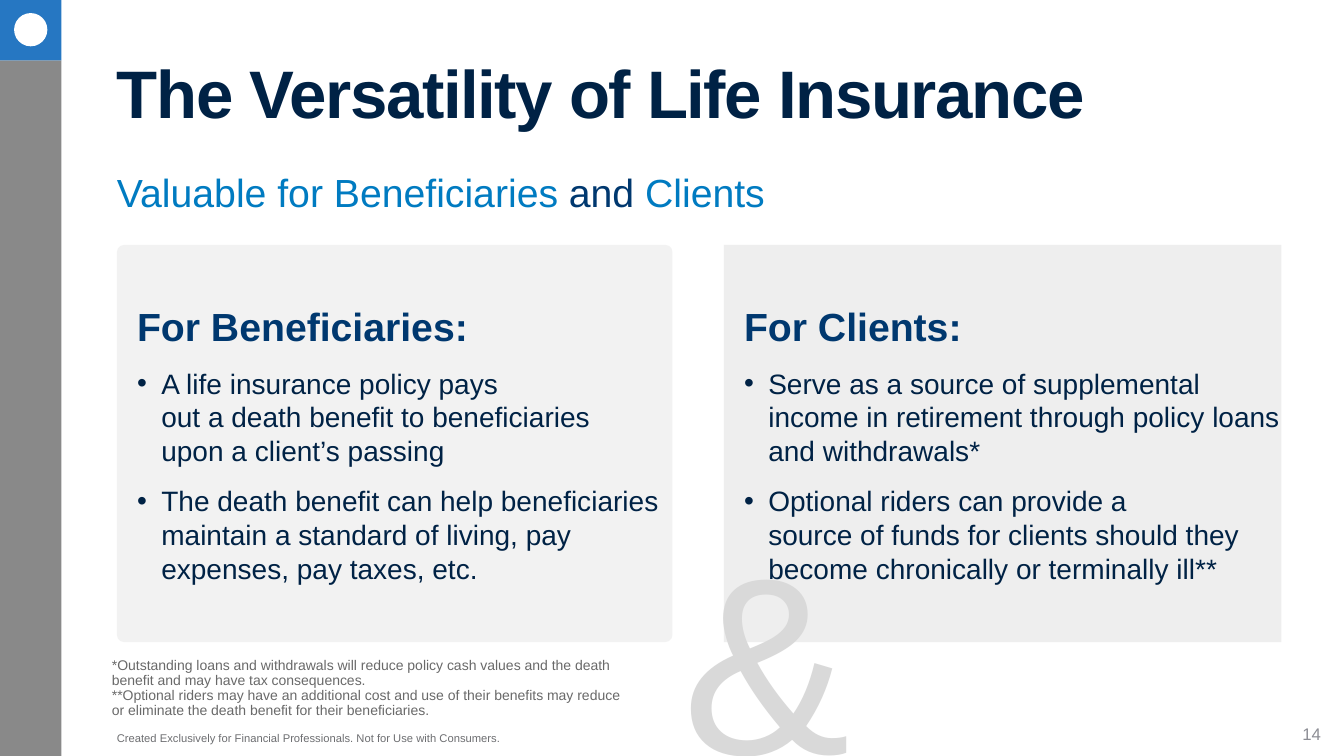
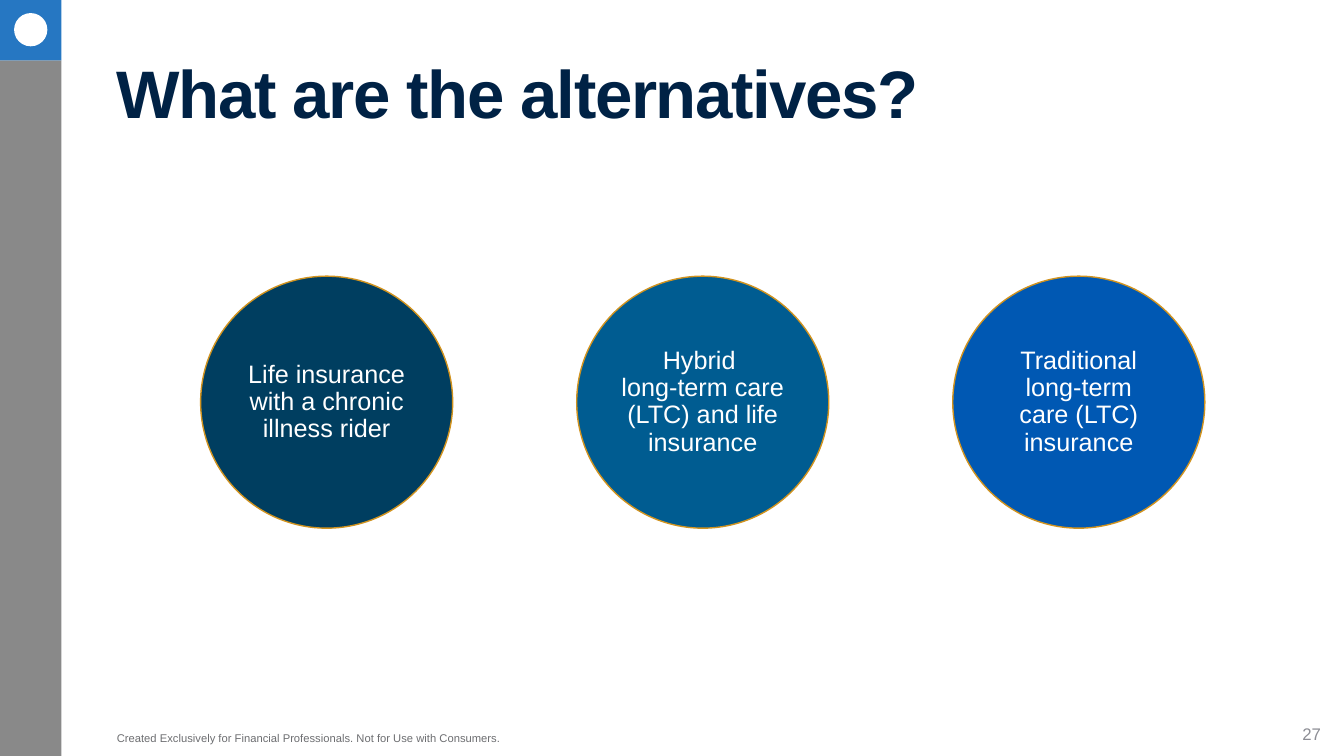
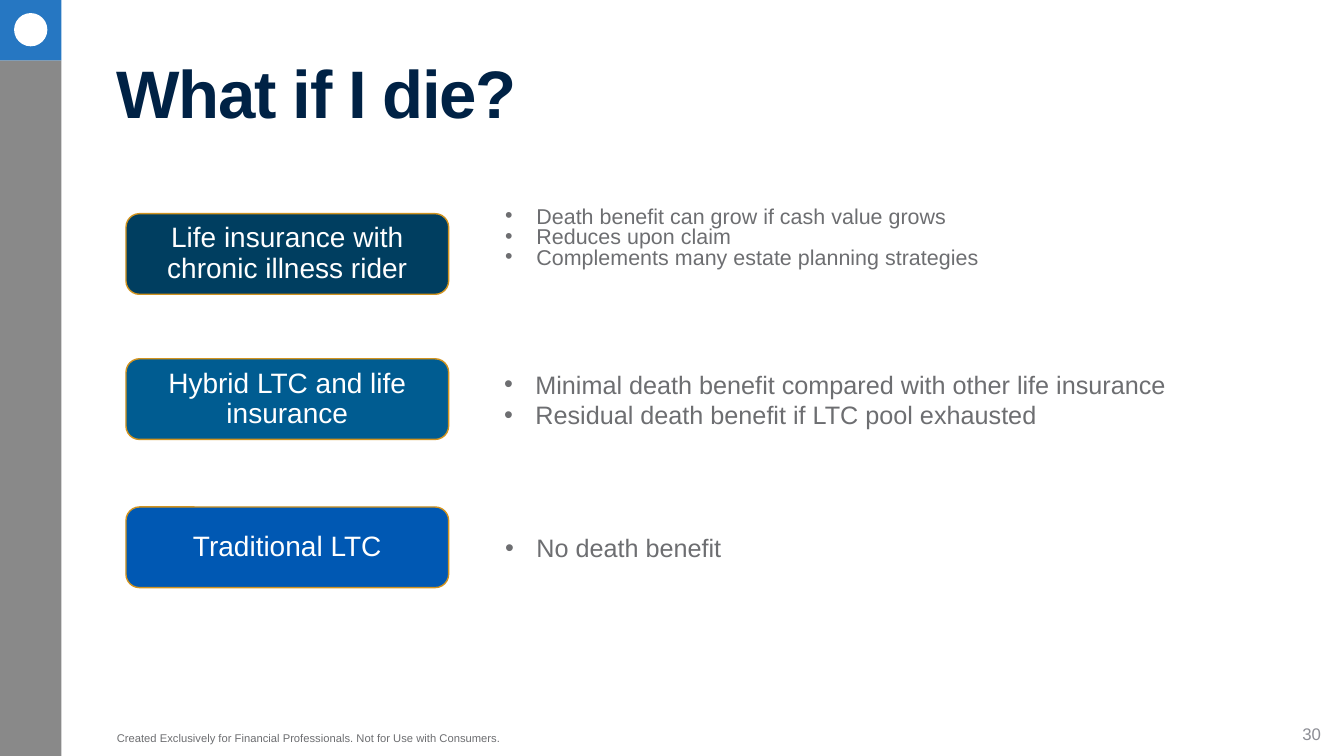
from copy import deepcopy

from lxml import etree
from pptx import Presentation
from pptx import util as u
from pptx.dml import color
from pptx.enum import shapes, text
from pptx.oxml import ns

FONT = "Arial"
NAVY, BLUE, SKY = "002245", "00386F", "007BC1"
GRAY, WHITE, GOLD = "6D6E71", "FFFFFF", "D1931F"
TONES = ["003E60", "005C91", "0058B3"]
KIND = shapes.MSO_SHAPE
ALIGN = text.PP_ALIGN
ANCHOR = text.MSO_ANCHOR
COMPARE, TITLED = 4, 5


def rgb(code):
    """Turn a hex string into a colour."""
    return color.RGBColor.from_string(code)


def place(shape, box):
    """Move a shape to a box given in inches."""
    shape.left, shape.top, shape.width, shape.height = map(u.Inches, box)


def draw(slide, kind, box, fill, line=None):
    """Add a flat preset shape."""
    shape = slide.shapes.add_shape(kind, *map(u.Inches, box))
    shape.shadow.inherit = False
    shape.fill.solid()
    shape.fill.fore_color.rgb = rgb(fill)
    if line:
        shape.line.color.rgb = rgb(line)
        shape.line.width = u.Pt(1)
    else:
        shape.line.fill.background()
    return shape


def send(slide, shape):
    """Send a shape to the back."""
    slide.shapes._spTree.insert(2, shape._element)


def frame(shape, anchor=ANCHOR.TOP, ins=(0.1, 0.05, 0.1, 0.05)):
    """Set up the text frame of a shape and return it."""
    area = shape.text_frame
    area.word_wrap = True
    area.auto_size = text.MSO_AUTO_SIZE.NONE
    area.vertical_anchor = anchor
    area.margin_left, area.margin_top, area.margin_right, area.margin_bottom = map(u.Inches, ins)
    return area


def label(slide, box, anchor=ANCHOR.TOP, **kw):
    """Add a text box and return its frame."""
    return frame(slide.shapes.add_textbox(*map(u.Inches, box)), anchor, **kw)


def write(area, words, size, ink, bold=False, align=ALIGN.LEFT, line=1.0,
          before=0, after=0, dent=0, space=0):
    """Write one paragraph of text, or of (text, colour) pairs, into a frame."""
    para = area.paragraphs[0]
    if para.runs:
        para = area.add_paragraph()
    props = para._p.get_or_add_pPr()
    props.set("marL", str(u.Inches(dent)))
    props.set("indent", str(-u.Inches(dent)))
    mark = etree.SubElement(props, ns.qn("a:buChar" if dent else "a:buNone"))
    if dent:
        mark.set("char", "•")
    para.alignment = align
    para.line_spacing = line
    para.space_before, para.space_after = u.Pt(before), u.Pt(after)
    for part, tint in [(words, ink)] if isinstance(words, str) else words:
        for row, piece in enumerate(part.split("\n")):
            if row:
                para.add_line_break()
            run = para.add_run()
            run.text = piece
            font = run.font
            font.name, font.size, font.bold = FONT, u.Pt(size), bold
            font.color.rgb = rgb(tint)
            if space:
                run._r.get_or_add_rPr().set("spc", str(space * 100))
    for gap in para._p.findall(ns.qn("a:br")):
        gap.append(deepcopy(para.runs[0]._r.rPr))


def start(deck, layout, title, page):
    """Add a slide with its title, side band, footer and page number."""
    slide = deck.slides.add_slide(deck.slide_layouts[layout])
    draw(slide, KIND.RECTANGLE, (0, 0.6, 0.61, 6.9), "898989")
    draw(slide, KIND.RECTANGLE, (0, 0, 0.61, 0.6), "2677C2")
    draw(slide, KIND.OVAL, (0.14, 0.13, 0.33, 0.33), WHITE)
    head = slide.shapes.title
    place(head, (1.06, 0.29, 11.82, 1.06))
    write(frame(head, ANCHOR.BOTTOM), title, 48, NAVY, bold=True, line=0.8, space=-1)
    write(label(slide, (1.06, 7.21, 9.75, 0.25)),
          "Created Exclusively for Financial Professionals. Not for Use with Consumers.", 8, GRAY)
    write(label(slide, (12.22, 7.08, 0.98, 0.4), ANCHOR.MIDDLE),
          str(page), 12, "8C8D94", align=ALIGN.RIGHT)
    return slide


def panel(slide, holder, box, kind, fill, title, items):
    """Fill a placeholder with a heading and bullets on a tinted panel."""
    back = draw(slide, kind, box, fill)
    if kind == KIND.ROUNDED_RECTANGLE:
        back.adjustments[0] = 0.018
    send(slide, back)
    place(holder, box)
    area = frame(holder, ANCHOR.MIDDLE, (0.2, 0, 0, 0))
    write(area, title, 28, BLUE, bold=True, after=6)
    for item in items:
        write(area, item, 20, NAVY, before=6, after=6, dent=0.24)


def badge(slide, kind, box, fill, words, size, side=0.1):
    """Draw a gold-edged shape with centred white text."""
    shape = draw(slide, kind, box, fill, GOLD)
    area = frame(shape, ANCHOR.MIDDLE, (side, 0.05, side, 0.05))
    write(area, words, size, WHITE, align=ALIGN.CENTER, line=0.9)


def uses(deck):
    """Build the slide on the two uses of life insurance."""
    slide = start(deck, COMPARE, "The Versatility of Life Insurance", 14)
    lead, left, right, note = list(slide.placeholders)[1:]
    place(lead, (1.06, 1.62, 11.82, 0.7))
    write(frame(lead), [("Valuable for Beneficiaries ", SKY), ("and", BLUE), (" Clients", SKY)],
          28, SKY, after=6)
    sign = slide.shapes.add_textbox(*map(u.Inches, (6.66, 2.64, 1.05, 5.43)))
    write(frame(sign, ANCHOR.BOTTOM, (0.11, 0.05, 0.11, 0.05)), "&", 180, "D9D9D9",
          align=ALIGN.CENTER, line=0.9, after=6)
    send(slide, sign)
    panel(slide, left, (1.16, 2.43, 5.51, 3.94), KIND.ROUNDED_RECTANGLE, "F2F2F2",
          "For Beneficiaries:", [
              "A life insurance policy pays \nout a death benefit to beneficiaries \n"
              "upon a client’s passing",
              "The death benefit can help beneficiaries maintain a standard of living, "
              "pay expenses, pay taxes, etc."])
    panel(slide, right, (7.18, 2.43, 5.53, 3.94), KIND.RECTANGLE, "EEEEEE",
          "For Clients:", [
              "Serve as a source of supplemental income in retirement through policy "
              "loans and withdrawals*",
              "Optional riders can provide a \nsource of funds for clients should they "
              "become chronically or terminally ill**"])
    place(note, (1.01, 6.48, 5.24, 0.7))
    area = frame(note)
    for words in (
            "*Outstanding loans and withdrawals will reduce policy cash values and the death "
            "benefit and may have tax consequences.",
            "**Optional riders may have an additional cost and use of their benefits may reduce "
            "or eliminate the death benefit for their beneficiaries."):
        write(area, words, 10, "696969", line=0.9)


def options(deck):
    """Build the slide with three circles."""
    slide = start(deck, TITLED, "What are the alternatives?", 27)
    names = [("Life insurance with a chronic illness rider", 0.1),
             ("Hybrid \nlong-term care (LTC) and life insurance", 0),
             ("Traditional long-term care (LTC) insurance", 0.1)]
    for col, ((words, side), fill) in enumerate(zip(names, TONES)):
        badge(slide, KIND.OVAL, (1.99 + 3.73 * col, 2.74, 2.5, 2.5), fill, words, 18, side)


def answers(deck):
    """Build the slide that pairs each option with its death benefit."""
    slide = start(deck, COMPARE, "What if I die?", 30)
    *lists, spare = list(slide.placeholders)[1:]
    spare._element.getparent().remove(spare._element)
    rows = [
        ("Life insurance with chronic illness rider", 2.12, (4.91, 2.01, 6.43, 0.7), 15.3, 0.8,
         ["Death benefit can grow if cash value grows", "Reduces upon claim",
          "Complements many estate planning strategies"]),
        ("Hybrid LTC and life insurance", 3.56, (4.9, 3.61, 7.5, 0.7), 18, 1.0,
         ["Minimal death benefit compared with other life insurance",
          "Residual death benefit if LTC pool exhausted"]),
        ("Traditional LTC", 5.03, (4.91, 5.23, 5.61, 0.58), 18, 1.0, ["No death benefit"]),
    ]
    for holder, fill, (name, top, box, size, line, items) in zip(lists, TONES, rows):
        badge(slide, KIND.ROUNDED_RECTANGLE, (1.25, top, 3.2, 0.8), fill, name, 20)
        place(holder, box)
        area = frame(holder)
        for item in items:
            write(area, item, size, GRAY, line=line, dent=0.31)


def main():
    """Build and save the deck."""
    deck = Presentation()
    deck.slide_width, deck.slide_height = u.Inches(13.33), u.Inches(7.5)
    uses(deck)
    options(deck)
    answers(deck)
    deck.save("out.pptx")


if __name__ == "__main__":
    main()
